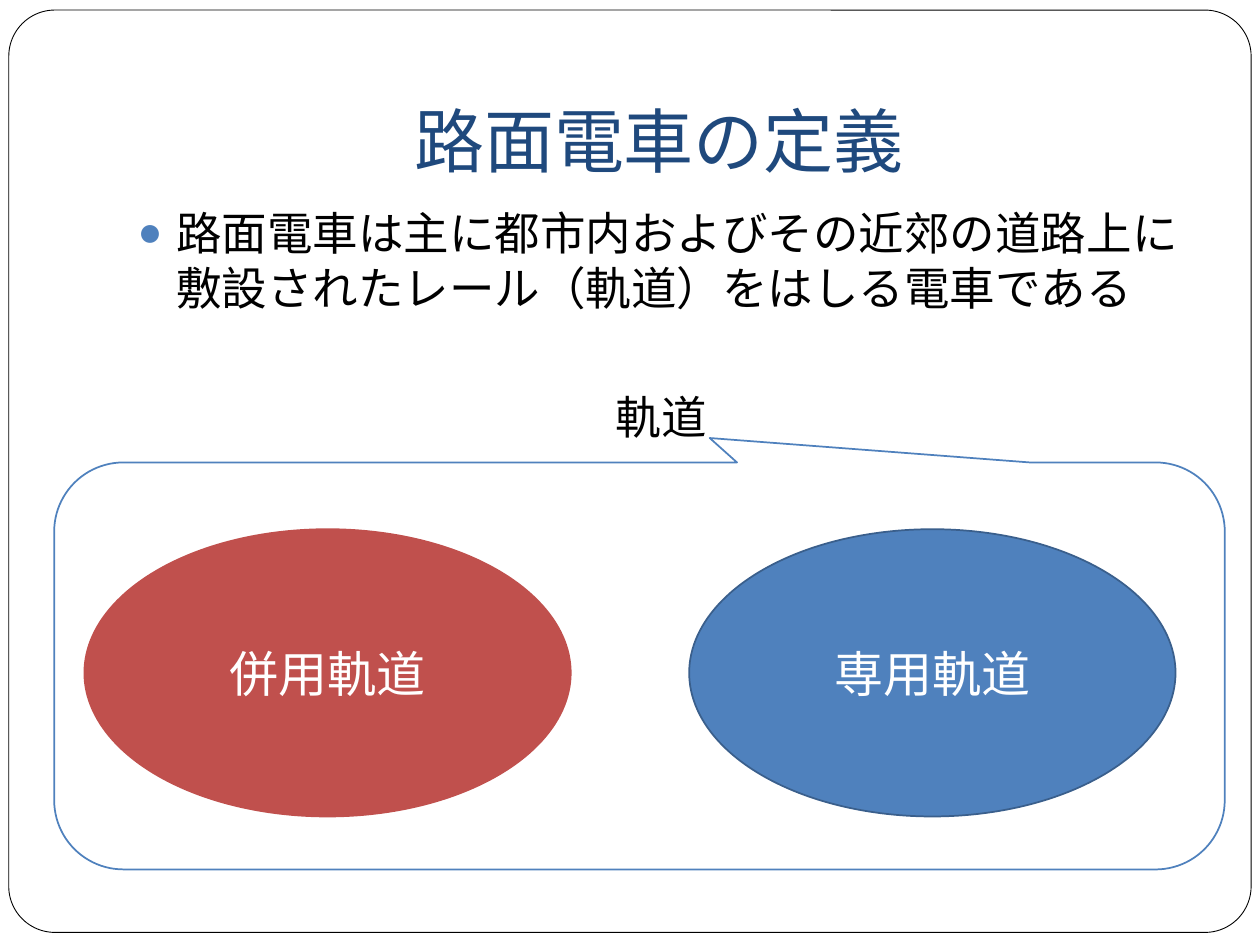
from dataclasses import dataclass
from typing import Optional

from lxml.etree import SubElement
from pptx import Presentation
from pptx.dml.color import RGBColor
from pptx.enum.shapes import MSO_SHAPE as Kind
from pptx.enum.text import MSO_ANCHOR as Anchor, PP_ALIGN as Align
from pptx.oxml.ns import qn
from pptx.util import Inches, Pt

WHITE = RGBColor(0xFF, 0xFF, 0xFF)
BLACK = RGBColor(0, 0, 0)
NAVY = RGBColor(0x1F, 0x49, 0x7D)
BLUE = RGBColor(0x4F, 0x81, 0xBD)
EDGE = RGBColor(0x3A, 0x5F, 0x8C)
RED = RGBColor(0xC0, 0x50, 0x4D)
FACE = "Calibri"


@dataclass
class Box:
    """Position and size in inches."""
    x: float
    y: float
    w: float
    h: float

    def place(self) -> tuple:
        return tuple(Inches(v) for v in (self.x, self.y, self.w, self.h))


@dataclass
class Form:
    """A preset shape with its colours and label."""
    kind: Kind
    box: Box
    fill: Optional[RGBColor]
    line: RGBColor
    width: float = 1
    adjust: tuple = ()
    turn: float = 0
    label: str = ""


def style(para, size: float, color: RGBColor, align: Align) -> None:
    """Set the font and alignment of a paragraph."""
    para.alignment = align
    font = para.font
    font.name, font.size, font.color.rgb = FACE, Pt(size), color


def draw(slide, form: Form) -> None:
    """Draw one preset shape."""
    shape = slide.shapes.add_shape(form.kind, *form.box.place())
    shape.shadow.inherit = False
    shape.rotation = form.turn
    for i, value in enumerate(form.adjust):
        shape.adjustments[i] = value
    if form.fill is None:
        shape.fill.background()
    else:
        shape.fill.solid()
        shape.fill.fore_color.rgb = form.fill
    shape.line.color.rgb = form.line
    shape.line.width = Pt(form.width)
    if form.label:
        frame = shape.text_frame
        frame.text = form.label
        frame.vertical_anchor = Anchor.MIDDLE
        style(frame.paragraphs[0], 28, WHITE, Align.CENTER)


def write(slide, box: Box, anchor: Anchor):
    """Add a wrapping text box and return its frame."""
    frame = slide.shapes.add_textbox(*box.place()).text_frame
    frame.word_wrap = True
    frame.vertical_anchor = anchor
    return frame


def bullet(para, indent: float) -> None:
    """Give a paragraph a blue hanging bullet."""
    props = para._p.get_or_add_pPr()
    props.set("marL", str(Inches(indent)))
    props.set("indent", str(-Inches(indent)))
    color = SubElement(props, qn("a:buClr"))
    SubElement(color, qn("a:srgbClr"), val=str(BLUE))
    SubElement(props, qn("a:buSzPct"), val="85000")
    SubElement(props, qn("a:buFont"), typeface=FACE)
    SubElement(props, qn("a:buChar"), char="●")


def oval(x: float, fill: RGBColor, line: RGBColor, label: str) -> Form:
    """Describe one kind of track."""
    return Form(Kind.OVAL, Box(x, 4.2, 3.86, 2.28), fill, line, label=label)


def main() -> None:
    """Build the slide and save it."""
    deck = Presentation()
    deck.slide_width, deck.slide_height = Inches(10), Inches(7.5)
    slide = deck.slides.add_slide(deck.slide_layouts[6])

    draw(slide, Form(Kind.ROUNDED_RECTANGLE, Box(0.07, 0.08, 9.86, 7.32),
                     WHITE, BLACK, 0.5, (0.05,)))

    title = write(slide, Box(0.98, 0.29, 8.5, 1.25), Anchor.BOTTOM)
    title.margin_bottom = Inches(0.1)
    title.text = "路面電車の定義"
    style(title.paragraphs[0], 40, NAVY, Align.CENTER)

    draw(slide, oval(0.67, RED, RED, "併用軌道"))
    draw(slide, oval(5.47, BLUE, EDGE, "専用軌道"))

    body = write(slide, Box(1, 1.58, 8.5, 5), Anchor.TOP)
    body.text = "路面電車は主に都市内およびその近郊の道路上に敷設されたレール（軌道）をはしる電車である"
    lead = body.paragraphs[0]
    bullet(lead, 0.3)
    style(lead, 26, BLACK, Align.LEFT)
    track = body.add_paragraph()
    track.text = "軌道"
    track.space_before = Pt(42.5)
    style(track, 26, BLACK, Align.CENTER)

    draw(slide, Form(Kind.ROUNDED_RECTANGULAR_CALLOUT,
                     Box(0.43, 3.67, 9.29, 3.23), None, BLUE,
                     adjust=(-0.06, 0.56, 0.17), turn=180))
    deck.save("out.pptx")


if __name__ == "__main__":
    main()
